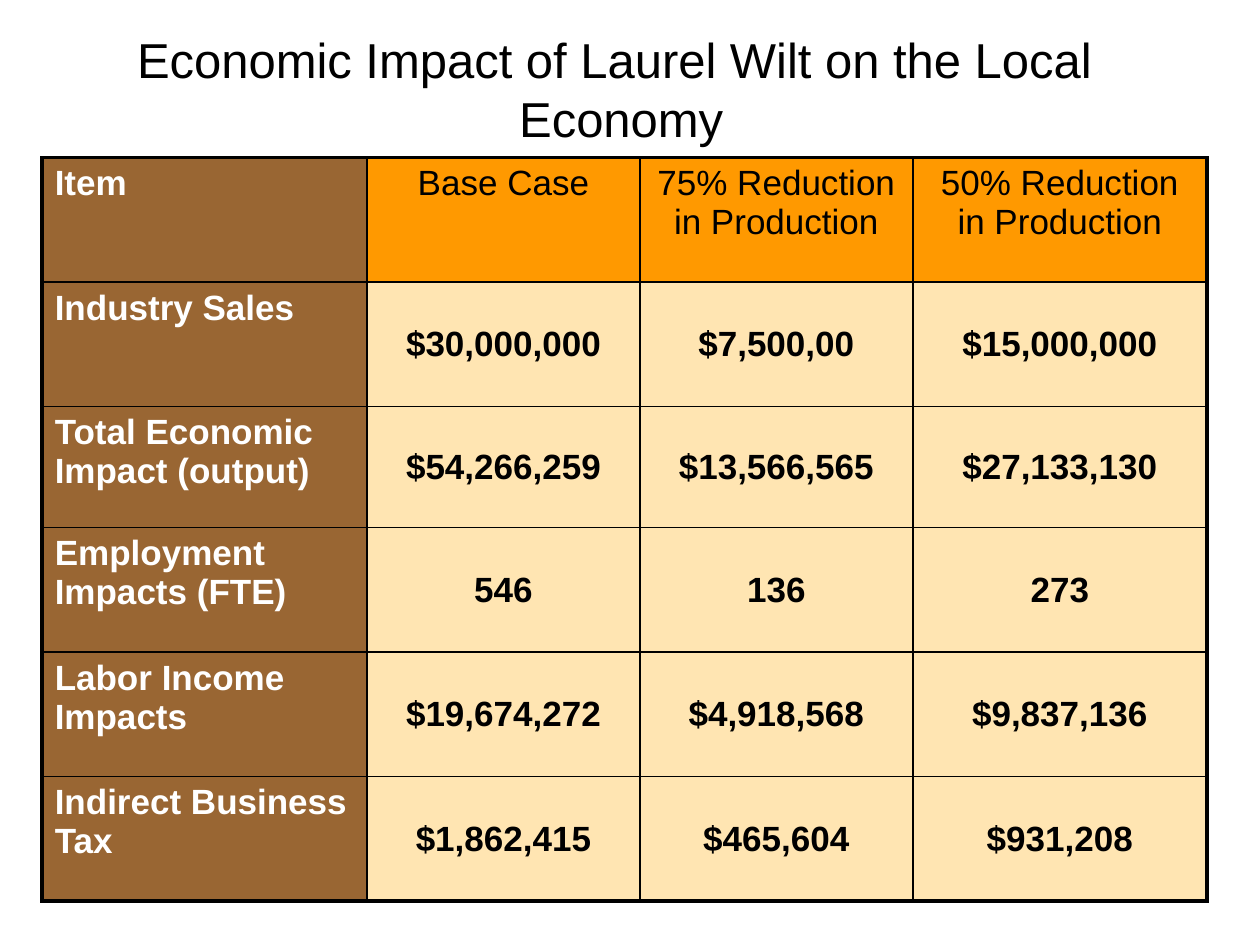
from dataclasses import dataclass

from lxml.etree import SubElement as Sub
from pptx import Presentation
from pptx.dml.color import RGBColor as Rgb
from pptx.enum.text import MSO_ANCHOR as Anchor, PP_ALIGN as Align
from pptx.oxml import parse_xml
from pptx.oxml.ns import nsdecls, qn
from pptx.util import Cm, Pt


@dataclass(frozen=True)
class Theme:
    font: str = "Arial"
    ink: str = "000000"
    pale: str = "FFFFFF"
    brown: str = "996633"
    amber: str = "FF9900"
    cream: str = "FFCC66"
    big: float = 28
    text: float = 20
    thin: float = 1
    thick: float = 2.25


class Deck:
    """Hold the theme and the current slide, and add elements to it."""

    def __init__(self, theme):
        self.theme = theme
        self.prs = Presentation()
        self.prs.slide_width, self.prs.slide_height = Cm(25.4), Cm(19.05)
        self.slide = self.prs.slides.add_slide(self.prs.slide_layouts[5])

    def style(self, para, size, color, bold, align):
        font = para.font
        font.name, font.size, font.bold = self.theme.font, Pt(size), bold
        font.color.rgb = Rgb.from_string(color)
        para.alignment = align

    def title(self, text, left, top, width, height):
        box = self.slide.shapes.title
        box.left, box.top, box.width, box.height = map(Cm, (left, top, width, height))
        frame = box.text_frame
        frame.text = text
        frame.vertical_anchor = Anchor.MIDDLE
        self.style(frame.paragraphs[0], self.theme.big, self.theme.ink, False, Align.CENTER)

    def border(self, cell, sides):
        props = cell._tc.get_or_add_tcPr()
        for spot, (side, width) in enumerate(sides.items()):
            props.insert(spot, parse_xml(
                f'<a:ln{side} {nsdecls("a")} w="{Pt(width)}"><a:solidFill>'
                f'<a:srgbClr val="{self.theme.ink}"/></a:solidFill></a:ln{side}>'))

    def cell(self, cell, text, row, col):
        t = self.theme
        head, side = row == 0, col == 0
        body = not (head or side)
        cell.text = text
        cell.vertical_anchor = Anchor.MIDDLE if body else Anchor.TOP
        para = cell.text_frame.paragraphs[0]
        self.style(para, t.text, t.pale if side else t.ink, side or body,
                   Align.LEFT if side else Align.CENTER)
        gap = Sub(para._p.get_or_add_pPr(), qn("a:spcBef"))
        Sub(gap, qn("a:spcPct")).set("val", "20000")
        para._p.pPr.insert(0, gap)
        cell.fill.solid()
        cell.fill.fore_color.rgb = Rgb.from_string(
            t.brown if side else t.amber if head else t.cream)
        if body:
            tint = cell._tc.tcPr.find(".//" + qn("a:srgbClr"))
            Sub(tint, qn("a:alpha")).set("val", "50000")

    def table(self, rows, left, top, widths, heights):
        last, end = len(rows) - 1, len(widths) - 1
        grid = self.slide.shapes.add_table(
            len(rows), len(widths), Cm(left), Cm(top),
            Cm(sum(widths)), Cm(sum(heights))).table
        grid.first_row = grid.horz_banding = False
        for col, width in zip(grid.columns, widths):
            col.width = Cm(width)
        for row, height in zip(grid.rows, heights):
            row.height = Cm(height)
        for r, row in enumerate(rows):
            for c, text in enumerate(row):
                cell = grid.cell(r, c)
                self.cell(cell, text, r, c)
                edges = {"L": c == 0, "R": c == end, "T": r == 0, "B": r == last}
                self.border(cell, {side: self.theme.thick if outer else self.theme.thin
                                   for side, outer in edges.items()})

    def save(self):
        self.prs.save("out.pptx")


ROWS = [
    ("Item", "Base Case", "75% Reduction in Production", "50% Reduction in Production"),
    ("Industry Sales", "$30,000,000", "$7,500,00", "$15,000,000"),
    ("Total Economic Impact (output)", "$54,266,259", "$13,566,565", "$27,133,130"),
    ("Employment Impacts (FTE)", "546", "136", "273"),
    ("Labor Income Impacts", "$19,674,272", "$4,918,568", "$9,837,136"),
    ("Indirect Business Tax", "$1,862,415", "$465,604", "$931,208"),
]


def main():
    deck = Deck(Theme())
    deck.title("Economic Impact of Laurel Wilt on the Local\v Economy", 0, 0.2, 24.77, 3.18)
    tall = 2.51
    deck.table(ROWS, 0.85, 3.18, (6.55, 5.5, 5.5, 5.93),
               (tall, tall, 2.44, tall, tall, tall))
    deck.save()


if __name__ == "__main__":
    main()
